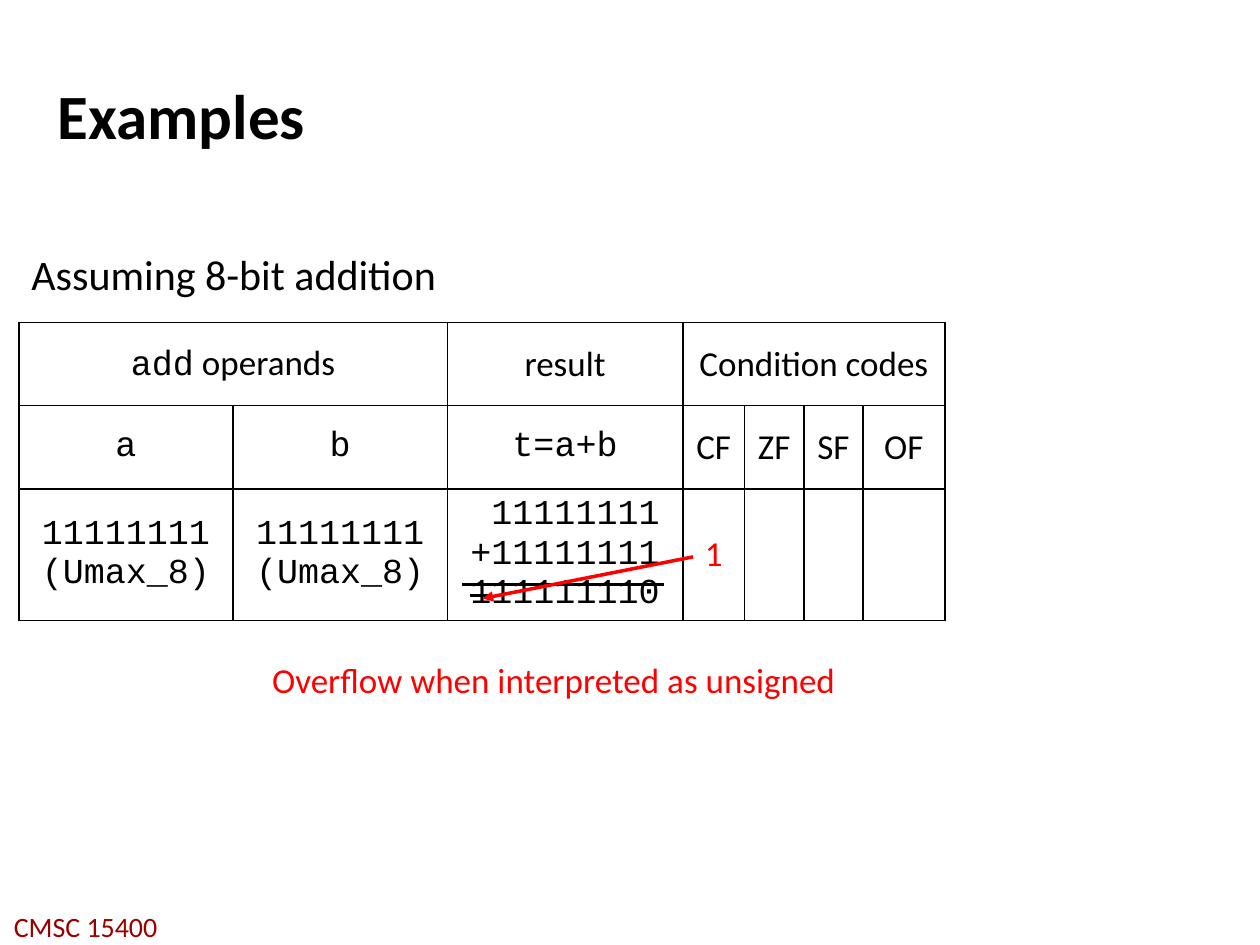
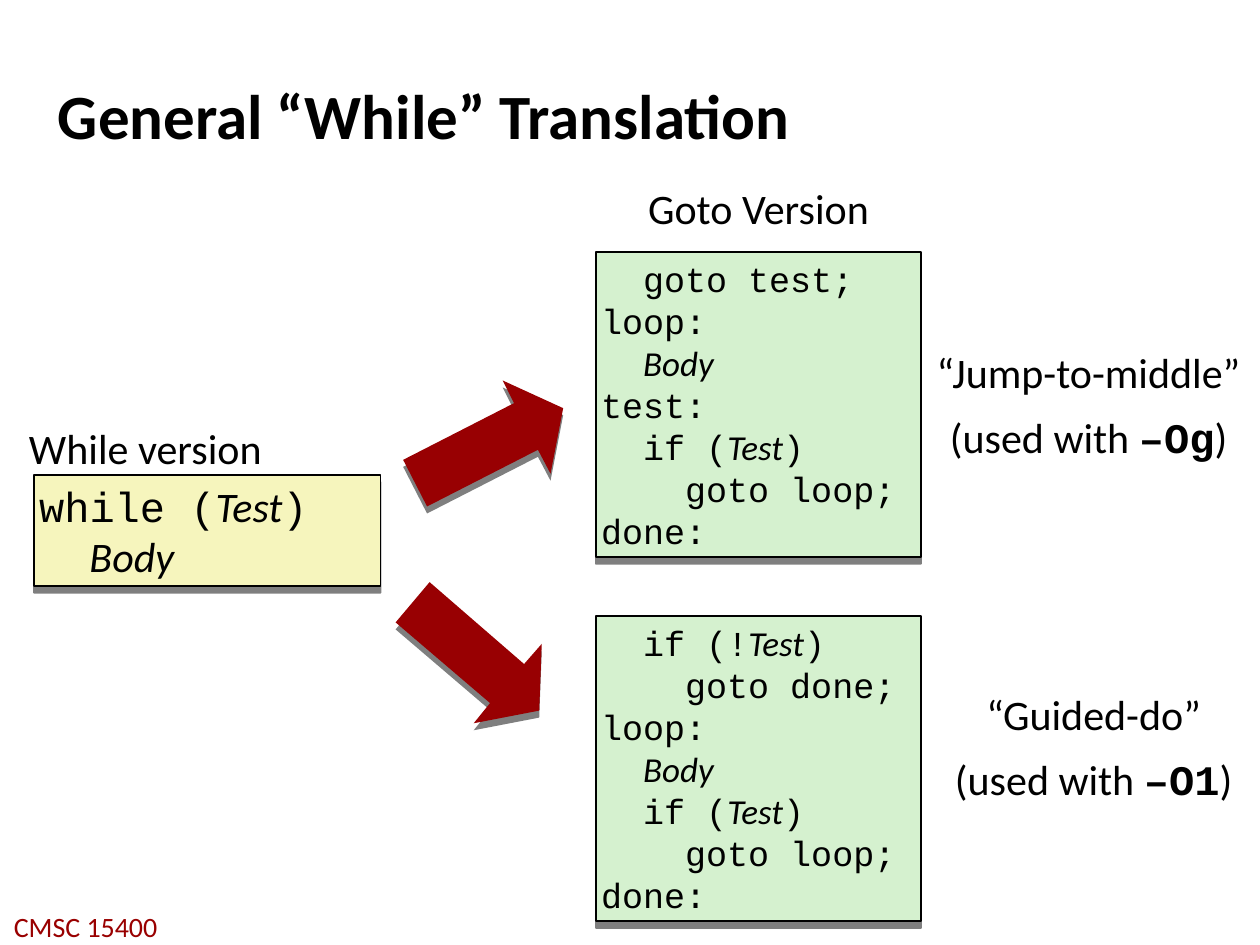
from lxml import etree
from pptx import Presentation
from pptx.dml.color import RGBColor
from pptx.enum.shapes import MSO_CONNECTOR as Line, MSO_SHAPE as Kind
from pptx.enum.text import MSO_ANCHOR as Anchor, MSO_AUTO_SIZE as Fit, PP_ALIGN as Align
from pptx.oxml import parse_xml
from pptx.oxml.ns import nsdecls, qn
from pptx.util import Pt

PX = 9144  # 100 px to the inch
SANS, MONO = "Calibri", "Courier New"
BLACK, RED, MAROON, ARROW = "000000", "FF0000", "990000", "980002"
YELLOW, GREEN = "F6F5BD", "D5F1CF"
NS = nsdecls("a")
hue = RGBColor.from_string


def write(frame, lines, size=24, font=SANS, color=BLACK, align=Align.LEFT, alt=None, inset=4):
    """Fill a frame; within a line, | switches between the main and alt run style."""
    if inset is not None:
        frame.margin_left = frame.margin_right = inset * PX
        frame.margin_top = frame.margin_bottom = inset * PX
    for i, line in enumerate(lines):
        para = frame.paragraphs[0] if i == 0 else frame.add_paragraph()
        para.alignment = align
        for n, part in enumerate(line.split("|")):
            if not part:
                continue
            run = para.add_run()
            run.text = part
            run.font.size, run.font.name = Pt(size), font
            run.font.color.rgb = hue(color)
            for key, val in (alt or {}).items() if n % 2 else ():
                setattr(run.font, key, val)


def shade(shape, fill):
    """Flat fill with a hard grey shadow below."""
    shape.fill.solid()
    shape.fill.fore_color.rgb = hue(fill)
    shape.shadow.inherit = False
    glow = shape.element.spPr.find(qn("a:effectLst"))
    glow.append(parse_xml(
        f'<a:outerShdw {NS} dist="50800" dir="5400000" algn="ctr" rotWithShape="0">'
        '<a:srgbClr val="000000"><a:alpha val="50000"/></a:srgbClr></a:outerShdw>'))


deck = Presentation()
deck.slide_width, deck.slide_height = 1000 * PX, 750 * PX
plain = deck.slide_layouts[5]

# Titles
pages = []
for name in ("Examples", "General “While” Translation"):
    page = deck.slides.add_slide(plain)
    head = page.shapes.title
    head.left, head.top, head.width, head.height = [v * PX for v in (42, 28, 917, 125)]
    head.text_frame.vertical_anchor = Anchor.MIDDLE
    head.text_frame.auto_size = Fit.NONE
    write(head.text_frame, [name], 36)
    head.text_frame.paragraphs[0].runs[0].font.bold = True
    pages.append(page)
first, second = pages

# Footer, shared through the layout
foot = first.shapes.add_textbox(-3 * PX, 717 * PX, 142 * PX, 37 * PX)
foot.text_frame.word_wrap = False
write(foot.text_frame, ["CMSC 15400"], 16, color=MAROON, align=Align.CENTER, inset=None)
plain.shapes.element.append(foot.element)

# Slide 1: table of additions
cols, rows = (170, 170, 187, 49, 47, 47, 65), (66, 66, 104)
grid = first.shapes.add_table(3, 7, 15 * PX, 256 * PX, sum(cols) * PX, sum(rows) * PX).table
grid.first_row = grid.horz_banding = False
for col, wide in zip(grid.columns, cols):
    col.width = wide * PX
for row, tall in zip(grid.rows, rows):
    row.height = tall * PX
for r in range(3):
    for c in range(7):
        cell = grid.cell(r, c)
        cell.fill.background()
        cell.vertical_anchor = Anchor.MIDDLE
        props = cell._tc.get_or_add_tcPr()
        for i, side in enumerate("LRTB"):
            props.insert(i, parse_xml(
                f'<a:ln{side} {NS} w="12700"><a:solidFill><a:srgbClr val="{BLACK}"/>'
                f'</a:solidFill></a:ln{side}>'))
grid.cell(0, 0).merge(grid.cell(0, 1))
grid.cell(0, 3).merge(grid.cell(0, 6))

umax = ["11111111", "(Umax_8)"]
cells = [
    (0, 0, ["add| operands"], MONO), (0, 2, ["result"], SANS),
    (0, 3, ["Condition codes"], SANS),
    (1, 0, ["a"], MONO), (1, 1, ["b"], MONO), (1, 2, ["t=a+b"], MONO),
    (2, 0, umax, MONO), (2, 1, umax, MONO),
    (2, 2, [" 11111111", "+11111111", "1|11111110"], MONO),
]
cells += [(1, 3 + i, [flag], SANS) for i, flag in enumerate(("CF", "ZF", "SF", "OF"))]
for r, c, lines, font in cells:
    alt = {"name": SANS} if r == 0 else None
    write(grid.cell(r, c).text_frame, lines, 20, font, align=Align.CENTER, alt=alt, inset=None)
write(grid.cell(2, 3).text_frame, ["1"], 20, color=RED, align=Align.CENTER, inset=None)
carry = grid.cell(2, 2).text_frame.paragraphs[2].runs[0]
carry._r.get_or_add_rPr().set("strike", "sngStrike")

# Slide 1: sum rule and carry arrow
for ends, color in (((367, 464, 527, 464), BLACK), ((550, 442, 383, 475), RED)):
    rule = first.shapes.add_connector(Line.STRAIGHT, *[v * PX for v in ends])
    rule.line.width = Pt(2)
    rule.line.color.rgb = hue(color)
    if color == RED:
        tip = etree.SubElement(rule.line._get_or_add_ln(), qn("a:tailEnd"))
        tip.set("type", "triangle")
    etree.SubElement(rule.element.spPr, qn("a:effectLst"))

# Slide 1: remarks
for text, x, y, w, h, size, color in (
        ("Assuming 8-bit addition", 15, 192, 341, 50, 24, BLACK),
        ("Overflow when interpreted as unsigned", 204, 518, 471, 44, 20, RED)):
    note = first.shapes.add_textbox(x * PX, y * PX, w * PX, h * PX)
    note.text_frame.word_wrap = False
    write(note.text_frame, [text], size, color=color, align=Align.CENTER, inset=None)

# Slide 2: labels
for lines, x, y, w, h, align in (
        (["While version"], 19, 331, 286, 49, Align.LEFT),
        (["Goto Version"], 443, 141, 318, 49, Align.CENTER),
        (["“Jump-to-middle”", "(used with |–Og|)"], 726, 271, 276, 100, Align.CENTER),
        (["“Guided-do”", "(used with |–O1|)"], 738, 542, 260, 100, Align.CENTER)):
    note = second.shapes.add_textbox(x * PX, y * PX, w * PX, h * PX)
    note.text_frame.word_wrap = True
    write(note.text_frame, lines, align=align, alt={"name": MONO, "bold": True})
    for para in note.text_frame.paragraphs[1:]:
        para.space_before = Pt(8.6)

# Slide 2: code boxes
loop = ["while (|Test|)", "  |Body"]
jump = ["  goto test;", "loop:", "  |Body", "test:", "  if (|Test|)",
        "    goto loop;", "done:"]
guard = ["  if (!|Test|)", "    goto done;", "loop:", "  |Body", "  if (|Test|)",
         "    goto loop;", "done:"]
for lines, x, y, w, h, size, fill in (
        (loop, 27, 377, 275, 88, 24, YELLOW),
        (jump, 473, 200, 258, 242, 20, GREEN),
        (guard, 473, 489, 258, 242, 20, GREEN)):
    box = second.shapes.add_shape(Kind.RECTANGLE, x * PX, y * PX, w * PX, h * PX)
    shade(box, fill)
    box.line.color.rgb = hue(BLACK)
    box.line.width = Pt(1)
    box.text_frame.word_wrap = True
    box.text_frame.vertical_anchor = Anchor.TOP
    write(box.text_frame, lines, size, MONO, alt={"name": SANS, "italic": True})
    if size == 20:
        for para in box.text_frame.paragraphs:
            para.line_spacing = Pt(24)

# Slide 2: block arrows
for start, *rest in (
        [(437, 376), (427, 357), (339, 402), (320, 365), (408, 320), (399, 302), (447, 324)],
        [(376, 574), (389, 558), (314, 494), (341, 462), (416, 527), (430, 511), (428, 564)]):
    path = second.shapes.build_freeform(*start, scale=PX)
    path.add_line_segments(rest, close=True)
    arrow = path.convert_to_shape()
    shade(arrow, ARROW)
    arrow.line.fill.background()

deck.save("out.pptx")
